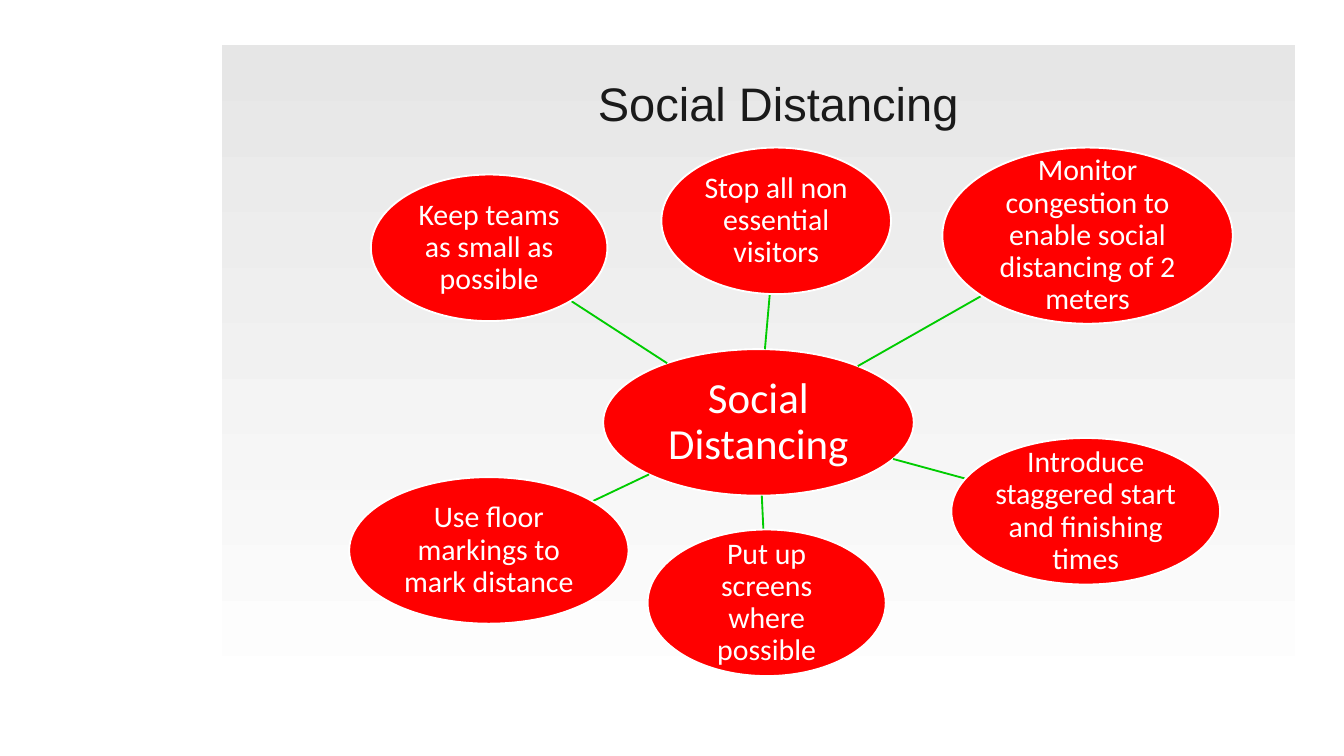
from math import hypot
from typing import NamedTuple

from lxml.etree import SubElement
from pptx import Presentation
from pptx.dml.color import RGBColor
from pptx.enum.shapes import MSO_CONNECTOR as Link, MSO_SHAPE as Kind
from pptx.enum.text import MSO_ANCHOR as Anchor, PP_ALIGN as Align
from pptx.oxml.ns import qn
from pptx.util import Cm, Pt

RED, GREEN, WHITE, INK = "FF0000", "00CC00", "FFFFFF", "1A1A1A"
TOP, BASE = "E6E6E6", "FFFFFF"


class Bubble(NamedTuple):
    text: str
    left: float
    top: float
    width: float
    height: float = 2.77
    size: float = 16

    def center(self) -> tuple[float, float]:
        return self.left + self.width / 2, self.top + self.height / 2

    def edge(self, other: "Bubble") -> tuple[float, float]:
        (x, y), (far_x, far_y) = self.center(), other.center()
        dx, dy = far_x - x, far_y - y
        reach = hypot(2 * dx / self.width, 2 * dy / self.height)
        return x + dx / reach, y + dy / reach


HUB = Bubble("Social Distancing", 11.4, 6.6, 5.87, size=23)
RING = [
    Bubble("Stop all non essential visitors", 12.5, 2.79, 4.34),
    Bubble("Monitor congestion to enable social distancing of 2 meters",
           17.81, 2.79, 5.49, 3.33),
    Bubble("Introduce staggered start and finishing times", 17.98, 8.28, 5.08),
    Bubble("Put up screens where possible", 12.24, 10.01, 4.5),
    Bubble("Use floor markings to mark distance", 6.6, 9.02, 5.28),
    Bubble("Keep teams as small as possible", 7.01, 3.3, 4.47),
]


def color(code: str) -> RGBColor:
    return RGBColor.from_string(code)


def write(shape, text: str, *, size: float, font: str, ink: str,
          anchor=Anchor.MIDDLE, inset: float = 0.03) -> None:
    frame = shape.text_frame
    frame.word_wrap = True
    frame.vertical_anchor = anchor
    frame.margin_left = frame.margin_right = Cm(inset)
    frame.margin_top = frame.margin_bottom = Cm(inset)
    para = frame.paragraphs[0]
    para.alignment = Align.CENTER
    para.line_spacing = 0.9
    run = para.add_run()
    run.text = text
    run.font.size = Pt(size)
    run.font.name = font
    run.font.color.rgb = color(ink)


def draw_panel(slide) -> None:
    panel = slide.shapes.add_shape(
        Kind.RECTANGLE, Cm(4.19), Cm(0.86), Cm(20.29), Cm(12.6))
    panel.shadow.inherit = False
    panel.line.fill.background()
    panel.fill.gradient()
    panel.fill.gradient_angle = 270
    for stop, place, code in zip(panel.fill.gradient_stops, (0, 1), (TOP, BASE)):
        stop.position = place
        stop.color.rgb = color(code)


def draw_spoke(slide, hub: Bubble, bubble: Bubble) -> None:
    ends = hub.edge(bubble) + bubble.edge(hub)
    spoke = slide.shapes.add_connector(Link.STRAIGHT, *map(Cm, ends))
    spoke.line.color.rgb = color(GREEN)
    spoke.line.width = Pt(1)
    SubElement(spoke._element.spPr, qn("a:effectLst"))


def draw_bubble(slide, bubble: Bubble) -> None:
    oval = slide.shapes.add_shape(
        Kind.OVAL, Cm(bubble.left), Cm(bubble.top),
        Cm(bubble.width), Cm(bubble.height))
    oval.shadow.inherit = False
    oval.fill.solid()
    oval.fill.fore_color.rgb = color(RED)
    oval.line.color.rgb = color(WHITE)
    oval.line.width = Pt(1)
    write(oval, bubble.text, size=bubble.size, font="Calibri", ink=WHITE)


def main() -> None:
    """Build the slide with a hub, six measures and a title."""
    deck = Presentation()
    deck.slide_width, deck.slide_height = Cm(25.4), Cm(14.29)
    slide = deck.slides.add_slide(deck.slide_layouts[6])
    draw_panel(slide)
    draw_bubble(slide, HUB)
    for bubble in RING:
        draw_spoke(slide, HUB, bubble)
        draw_bubble(slide, bubble)
    title = slide.shapes.add_textbox(Cm(5.72), Cm(1.65), Cm(17.98), Cm(0.84))
    write(title, "Social Distancing", size=25.2, font="Arial", ink=INK,
          anchor=Anchor.BOTTOM, inset=0)
    deck.save("out.pptx")


if __name__ == "__main__":
    main()
